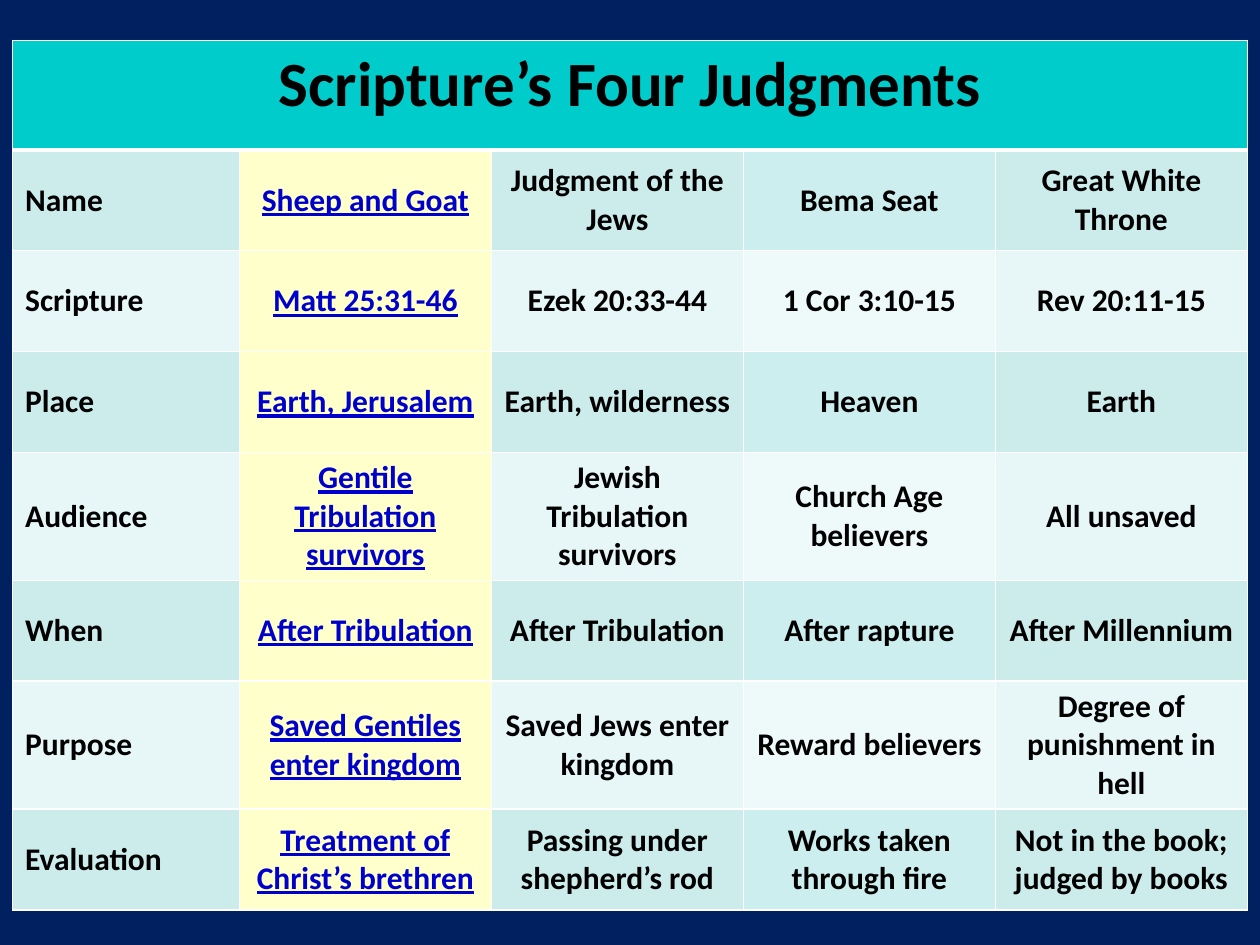
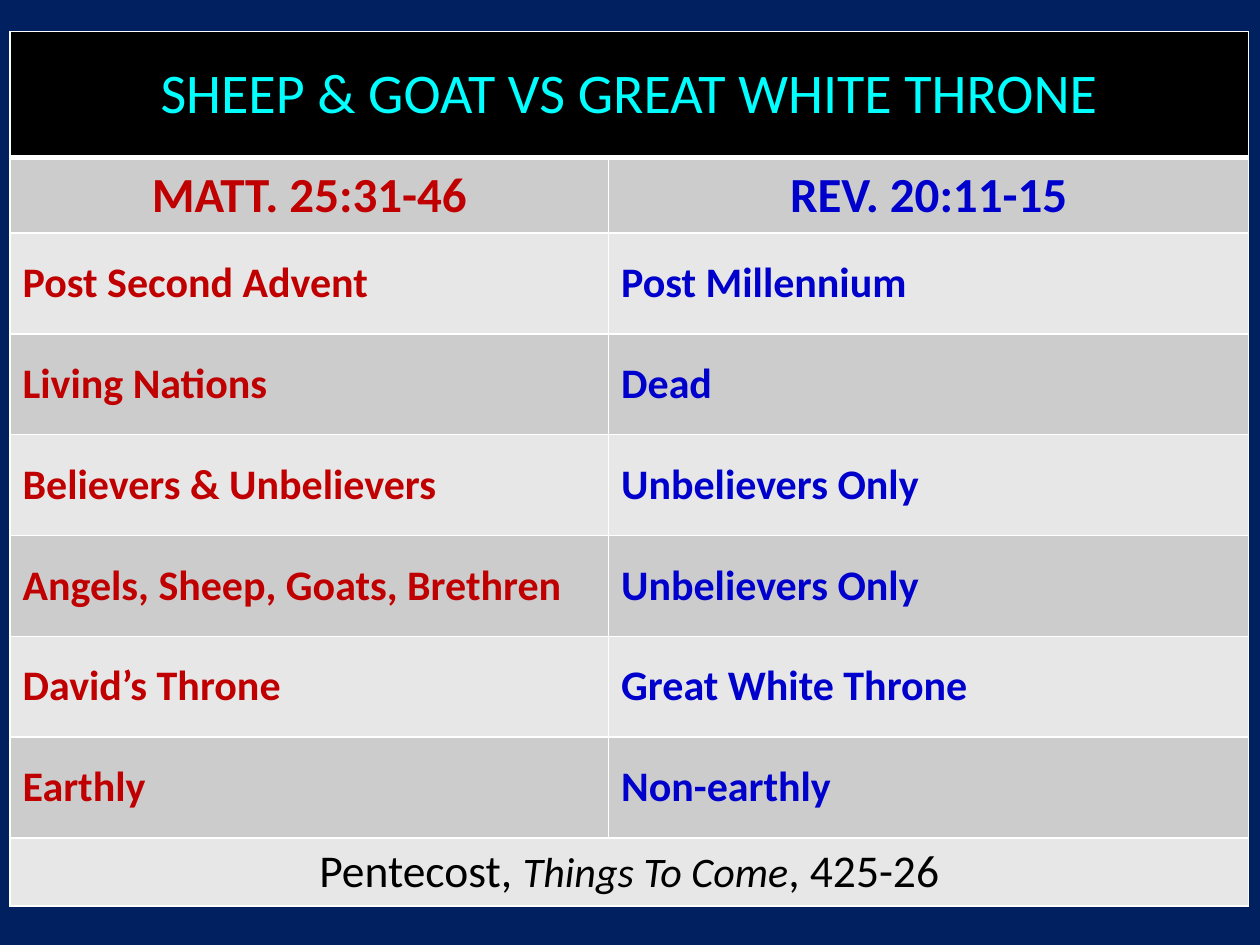
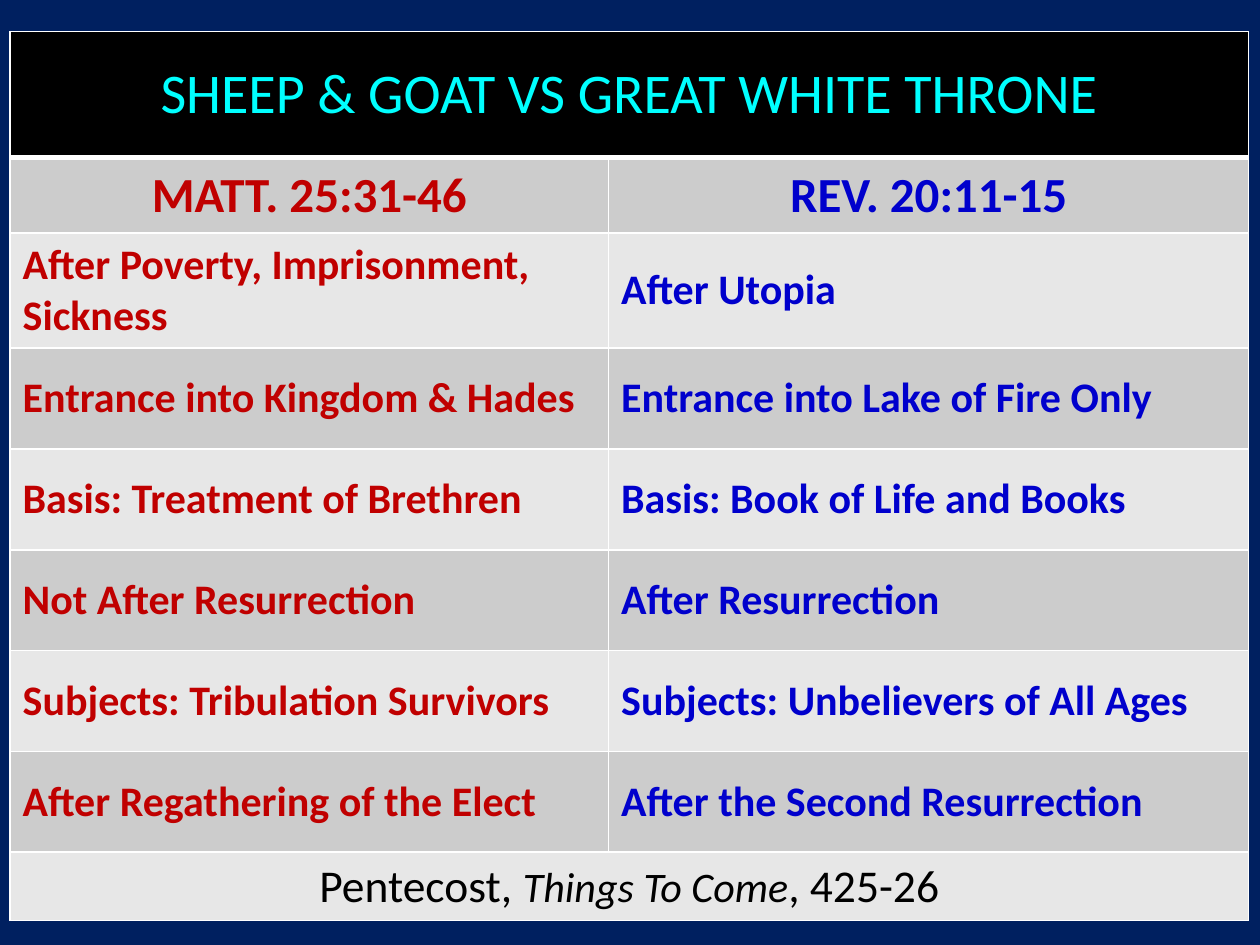
from lxml import etree
from pptx import Presentation
from pptx import util as u
from pptx.dml import color
from pptx.enum import text
from pptx.oxml import ns

NAVY, WHITE, BLACK = "002060", "FFFFFF", "000000"
RED, BLUE, CYAN = "C00000", "0000CC", "00FFFF"
TEAL, CREAM = "00CCCC", "FFFFCC"
GRAY = ["CCCCCC", "E7E7E7"]
MINT = ["CCECEC", "E7F6F6"]
PALE = ["CCEEEE", "EEF9F9"]
LEFT, MID = text.PP_ALIGN.LEFT, text.PP_ALIGN.CENTER


def hue(code):
    return color.RGBColor.from_string(code)


def put(cell, runs, fill, align=LEFT, anchor=text.MSO_ANCHOR.MIDDLE):
    cell.fill.solid()
    cell.fill.fore_color.rgb = hue(fill)
    cell.vertical_anchor = anchor
    para = cell.text_frame.paragraphs[0]
    para.alignment = align
    for words, size, ink, form in runs:
        run = para.add_run()
        run.text = words
        run.font.name = "Calibri"
        run.font.size = u.Pt(size)
        run.font.color.rgb = hue(ink)
        for key, value in form.items():
            setattr(run.font, key, value)


bold = {"bold": True}
plain = {"bold": False}
slant = {"bold": False, "italic": True}
link = {"bold": True, "underline": True}

four = [
    ["Name", "Sheep and Goat", "Judgment of the Jews", "Bema Seat", "Great White Throne"],
    ["Scripture", "Matt 25:31-46", "Ezek 20:33-44", "1 Cor 3:10-15", "Rev 20:11-15"],
    ["Place", "Earth, Jerusalem", "Earth, wilderness", "Heaven", "Earth"],
    ["Audience", "Gentile Tribulation survivors", "Jewish Tribulation survivors",
     "Church Age believers", "All unsaved"],
    ["When", "After Tribulation", "After Tribulation", "After rapture", "After Millennium"],
    ["Purpose", "Saved Gentiles enter kingdom", "Saved Jews enter kingdom",
     "Reward believers", "Degree of punishment in hell"],
    ["Evaluation", "Treatment of Christ’s brethren", "Passing under shepherd’s rod",
     "Works taken through fire", "Not in the book; judged by books"],
]
head = ["MATT. 25:31-46", "REV. 20:11-15"]
first = [
    head,
    ["Post Second Advent", "Post Millennium"],
    ["Living Nations", "Dead"],
    ["Believers & Unbelievers", "Unbelievers Only"],
    ["Angels, Sheep, Goats, Brethren", "Unbelievers Only"],
    ["David’s Throne", "Great White Throne"],
    ["Earthly", "Non-earthly"],
]
second = [
    head,
    ["After Poverty, Imprisonment, Sickness", "After Utopia"],
    ["Entrance into Kingdom & Hades", "Entrance into Lake of Fire Only"],
    ["Basis: Treatment of Brethren", "Basis: Book of Life and Books"],
    ["Not After Resurrection", "After Resurrection"],
    ["Subjects: Tribulation Survivors", "Subjects: Unbelievers of All Ages"],
    ["After Regathering of the Elect", "After the Second Resurrection"],
]
source = [("Pentecost, ", 26, BLACK, plain), ("Things To Come", 24, BLACK, slant),
          (", 425-26", 26, BLACK, plain)]

pair = [4.75, 5.08]
plans = [
    (four, 0.1, 0.32, [1.8] + [2] * 4, [0.87] + [0.8] * 7),
    (first, 0.08, 0.25, pair, [1, 0.6] + [0.8] * 6 + [0.54]),
    (second, 0.08, 0.25, pair, [1, 0.6, 0.9] + [0.8] * 5 + [0.53]),
]

prs = Presentation()
prs.slide_width, prs.slide_height = u.Inches(10), u.Inches(7.5)

for body, left, top, cols, rows in plans:
    slide = prs.slides.add_slide(prs.slide_layouts[6])
    slide.background.fill.solid()
    slide.background.fill.fore_color.rgb = hue(NAVY)
    box = [u.Inches(n) for n in (left, top, sum(cols), sum(rows))]
    table = slide.shapes.add_table(len(rows), len(cols), *box).table
    table.first_row = table.horz_banding = False
    for col, wide in zip(table.columns, cols):
        col.width = u.Inches(wide)
    for row, high in zip(table.rows, rows):
        row.height = u.Inches(high)

    for r in range(len(rows)):
        for c in range(len(cols)):
            props = table.cell(r, c)._tc.get_or_add_tcPr()
            for side in ("lnL", "lnR", "lnT", "lnB"):
                thick = 3 if (r, side) in ((0, "lnB"), (1, "lnT")) else 1
                line = etree.SubElement(props, ns.qn("a:" + side), w=str(u.Pt(thick)))
                solid = etree.SubElement(line, ns.qn("a:solidFill"))
                etree.SubElement(solid, ns.qn("a:srgbClr"), val=WHITE)

    title = table.cell(0, 0)
    title.merge(table.cell(0, len(cols) - 1))
    if body is four:
        put(title, [("Scripture’s Four Judgments", 36, BLACK, bold)], TEAL, MID,
            text.MSO_ANCHOR.TOP)
    else:
        put(title, [("SHEEP & GOAT VS GREAT WHITE THRONE", 32, CYAN, plain)], BLACK, MID)
        foot = table.cell(len(rows) - 1, 0)
        foot.merge(table.cell(len(rows) - 1, 1))
        put(foot, source, GRAY[1], MID)

    for r, line in enumerate(body):
        for c, words in enumerate(line):
            cell = table.cell(r + 1, c)
            if body is four:
                ink, form = (BLUE, link) if c == 1 else (BLACK, bold)
                fill = CREAM if c == 1 else (PALE if c == 3 else MINT)[r % 2]
                put(cell, [(words, 18, ink, form)], fill, MID if c else LEFT)
            else:
                size, align = (24, LEFT) if r else (28, MID)
                put(cell, [(words, size, (RED, BLUE)[c], bold)], GRAY[r % 2], align)

prs.save("out.pptx")
